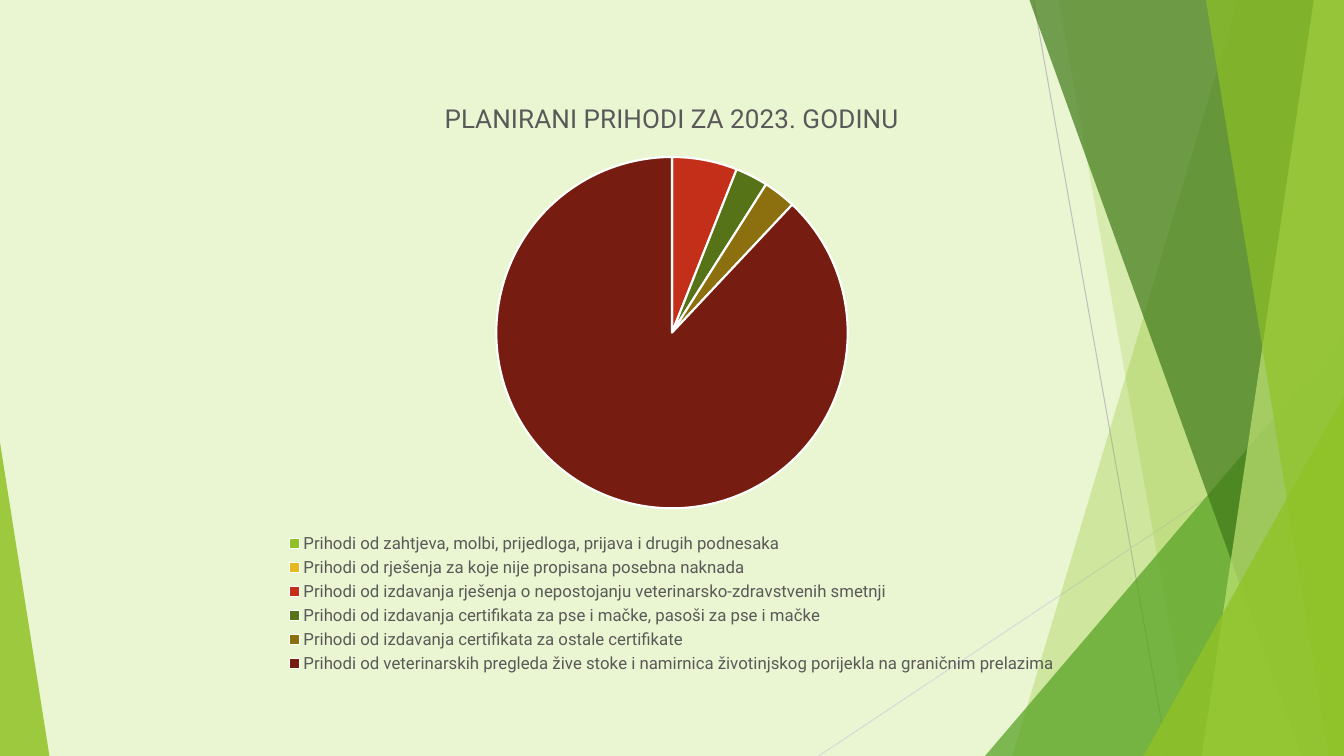
from lxml.etree import SubElement
from pptx import Presentation
from pptx.chart.data import CategoryChartData
from pptx.dml.color import RGBColor
from pptx.enum.chart import XL_CHART_TYPE, XL_LEGEND_POSITION
from pptx.enum.shapes import MSO_CONNECTOR, MSO_SHAPE
from pptx.oxml.ns import qn
from pptx.util import Inches, Pt

WIDE, HIGH = 13.33, 7.5
FONT = "Roboto"
PALE = RGBColor(0xEA, 0xF6, 0xD1)
LIME = RGBColor(0x90, 0xC2, 0x26)
LEAF = RGBColor(0x54, 0xA0, 0x21)
MOSS = RGBColor(0x3F, 0x78, 0x19)
MINT = RGBColor(0xC0, 0xE4, 0x74)
GOLD = RGBColor(0xE6, 0xB9, 0x1E)
RED = RGBColor(0xC4, 0x2F, 0x1A)
OLIVE = RGBColor(0x56, 0x74, 0x17)
BRONZE = RGBColor(0x8C, 0x70, 0x10)
MAROON = RGBColor(0x76, 0x1C, 0x10)
SILVER = RGBColor(0xBF, 0xBF, 0xBF)
MIST = RGBColor(0xD9, 0xD9, 0xD9)
GREY = RGBColor(0x59, 0x59, 0x59)
BLACK = RGBColor(0, 0, 0)
WHITE = RGBColor(0xFF, 0xFF, 0xFF)

TITLE = "PLANIRANI PRIHODI ZA 2023. GODINU"
INCOME = [
    ("Prihodi od zahtjeva, molbi, prijedloga, prijava i drugih podnesaka", 0, LIME),
    ("Prihodi od rješenja za koje nije propisana posebna naknada", 0, GOLD),
    ("Prihodi od izdavanja rješenja o nepostojanju veterinarsko-zdravstvenih smetnji", 6, RED),
    ("Prihodi od izdavanja certifikata za pse i mačke, pasoši za pse i mačke", 3, OLIVE),
    ("Prihodi od izdavanja certifikata za ostale certifikate", 3, BRONZE),
    ("Prihodi od veterinarskih pregleda žive stoke i namirnica životinjskog porijekla "
     "na graničnim prelazima", 88, MAROON),
]


def style(font, size, color):
    """Apply the slide font with a size and a colour."""
    for name, value in {"name": FONT, "size": Pt(size), "bold": False}.items():
        setattr(font, name, value)
    font.color.rgb = color


def paint(shape, color, alpha):
    """Fill a shape with a see-through colour and no outline."""
    shape.shadow.inherit = False
    shape.line.fill.background()
    shape.fill.solid()
    shape.fill.fore_color.rgb = color
    tint = shape.element.spPr.find(qn("a:solidFill"))[0]
    SubElement(tint, qn("a:alpha"), val=str(alpha * 1000))


def add_line(slide, start, end, color):
    """Draw a thin straight line."""
    ends = [Inches(value) for value in (*start, *end)]
    line = slide.shapes.add_connector(MSO_CONNECTOR.STRAIGHT, *ends)
    line.line.color.rgb = color
    line.line.width = Pt(0.75)
    SubElement(line.element.spPr, qn("a:effectLst"))


def add_band(slide, top, foot, color, alpha):
    """Draw a slanted band that reaches the right edge."""
    start, *rest = [(Inches(x), Inches(y)) for x, y in
                    ((top, 0), (WIDE, 0), (WIDE, HIGH), (foot, HIGH))]
    draft = slide.shapes.build_freeform(*start, scale=1.0)
    draft.add_line_segments(rest, close=True)
    paint(draft.convert_to_shape(), color, alpha)


def add_wedge(slide, left, top, width, peak, color, alpha):
    """Draw a triangle that stands on the lower edge."""
    box = [Inches(value) for value in (left, top, width, HIGH - top)]
    wedge = slide.shapes.add_shape(MSO_SHAPE.ISOSCELES_TRIANGLE, *box)
    wedge.adjustments[0] = peak
    paint(wedge, color, alpha)


def add_pie(slide):
    """Add the income pie with its title and legend."""
    names, values, colors = zip(*INCOME)
    data = CategoryChartData()
    data.categories = names
    data.add_series("Series 1", values)
    box = [Inches(value) for value in (2.22, 0.79, 8.89, 5.93)]
    chart = slide.shapes.add_chart(XL_CHART_TYPE.PIE, *box, data).chart
    style(chart.font, 10, BLACK)
    chart.has_title = True
    chart.chart_title.include_in_layout = False
    frame = chart.chart_title.text_frame
    frame.text = TITLE
    style(frame.paragraphs[0].runs[0].font, 18.6, GREY)
    chart.has_legend = True
    chart.legend.position = XL_LEGEND_POSITION.BOTTOM
    chart.legend.include_in_layout = False
    style(chart.legend.font, 12, GREY)
    plot = chart.plots[0]
    plot.vary_by_categories = True
    for index, color in enumerate(colors):
        part = plot.series[0].points[index].format
        part.fill.solid()
        part.fill.fore_color.rgb = color
        part.line.color.rgb = WHITE
        part.line.width = Pt(1.5)


def main():
    """Build and save the slide."""
    deck = Presentation()
    deck.slide_width, deck.slide_height = Inches(WIDE), Inches(HIGH)
    slide = deck.slides.add_slide(deck.slide_layouts[6])
    slide.background.fill.solid()
    slide.background.fill.fore_color.rgb = PALE
    add_line(slide, (10.25, 0), (11.58, HIGH), SILVER)
    add_line(slide, (WIDE, 4.03), (8.12, HIGH), MIST)
    add_band(slide, 12.28, 10.04, LIME, 30)
    add_band(slide, 10.5, 11.83, LIME, 20)
    add_wedge(slide, 9.77, 3.33, 3.56, 1, LEAF, 72)
    add_band(slide, 10.21, 12.91, MOSS, 70)
    add_band(slide, 13.03, 11.92, MINT, 70)
    add_band(slide, 11.96, 13.18, LIME, 65)
    add_wedge(slide, 11.34, 3.93, 1.99, 1, LIME, 80)
    add_wedge(slide, 0, 4.39, 0.49, 0, LIME, 85)
    add_pie(slide)
    deck.save("out.pptx")


if __name__ == "__main__":
    main()
